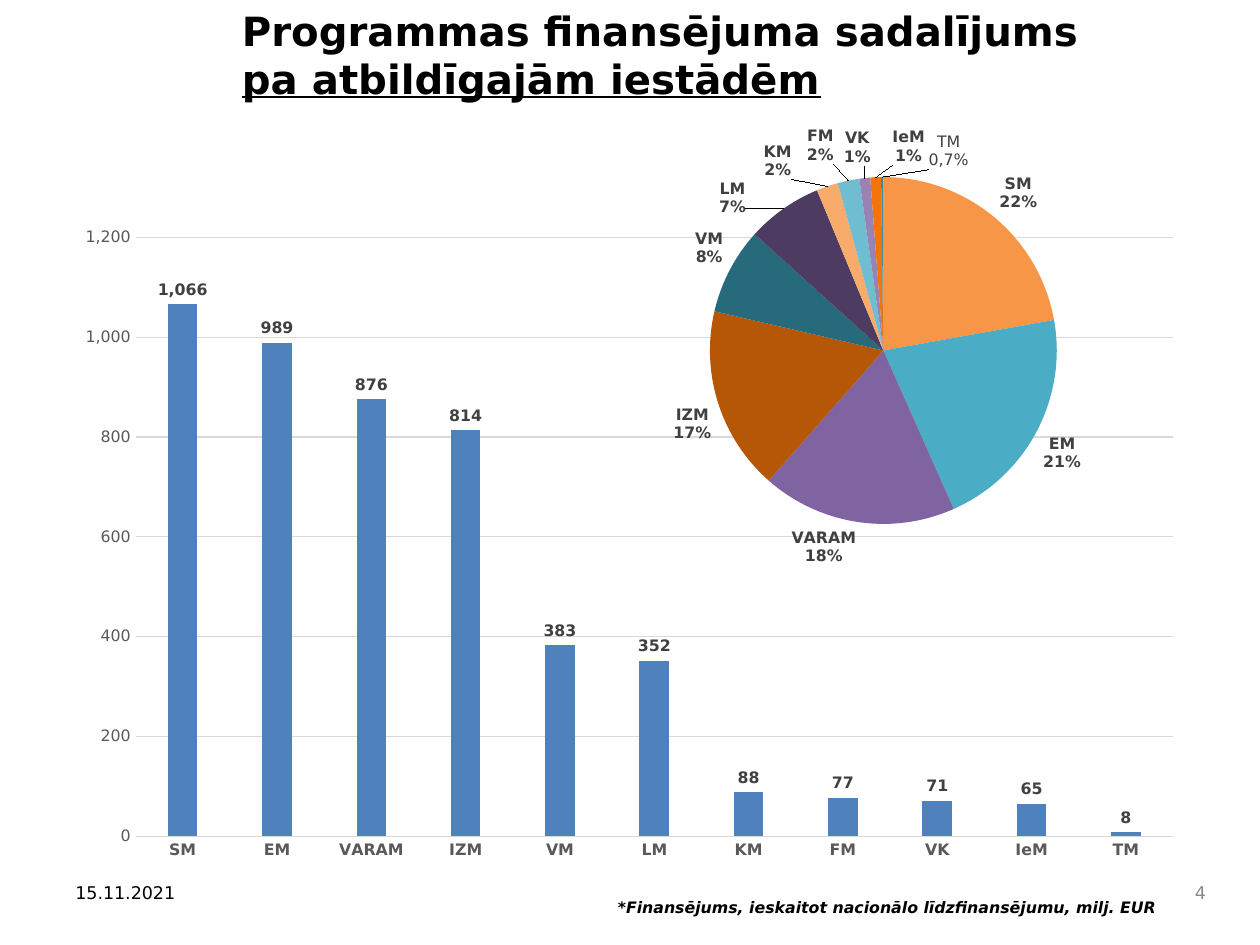
"""Build a slide of programme funding by institution, with a column chart and a pie."""
from typing import NamedTuple

from pptx import Presentation
from pptx.chart.data import CategoryChartData as Data
from pptx.dml.color import RGBColor as Rgb
from pptx.enum.chart import XL_CHART_TYPE as Kind, XL_LABEL_POSITION as Pos, XL_TICK_MARK as Tick
from pptx.enum.text import MSO_ANCHOR as Anchor, MSO_AUTO_SIZE as Fit, PP_ALIGN as Align
from pptx.oxml import parse_xml
from pptx.oxml.ns import nsdecls, qn
from pptx.util import Inches, Pt

WIDE, HIGH = Inches(10), Inches(7.5)
FONT = "DejaVu Sans"
BLACK = Rgb(0, 0, 0)
GREY = Rgb(0x89, 0x89, 0x89)
DARK = Rgb(0x40, 0x40, 0x40)
MID = Rgb(0x59, 0x59, 0x59)
PALE = Rgb(0xD9, 0xD9, 0xD9)
BLUE = Rgb(0x4F, 0x81, 0xBD)


class Box(NamedTuple):
    """A frame given as shares of its parent."""
    x: float
    y: float
    w: float
    h: float

    def rect(self) -> tuple:
        """Return the frame in slide units."""
        return (int(self.x * WIDE), int(self.y * HIGH),
                int(self.w * WIDE), int(self.h * HIGH))


class Note(NamedTuple):
    """A line of small text."""
    text: str
    box: Box
    size: int
    tint: Rgb
    align: Align
    anchor: Anchor = Anchor.TOP
    strong: bool = False


class Part(NamedTuple):
    """One institution: its sum, share, slice colour and label shift."""
    name: str
    total: int
    share: float
    tint: Rgb
    shift: tuple = ()


PARTS = [
    Part("SM", 1066, 22, Rgb(0xF7, 0x96, 0x46)),
    Part("EM", 989, 21, Rgb(0x4B, 0xAC, 0xC6)),
    Part("VARAM", 876, 18, Rgb(0x80, 0x64, 0xA2)),
    Part("IZM", 814, 17, Rgb(0xB6, 0x57, 0x08)),
    Part("VM", 383, 8, Rgb(0x27, 0x6A, 0x7C)),
    Part("LM", 352, 7, Rgb(0x4D, 0x3B, 0x62), (-0.05, 0.03)),
    Part("KM", 88, 2, Rgb(0xF9, 0xAB, 0x6B), (-0.05, 0)),
    Part("FM", 77, 2, Rgb(0x6F, 0xBD, 0xD1), (-0.02, -0.02)),
    Part("VK", 71, 1, Rgb(0x99, 0x83, 0xB5), (0.01, -0.01)),
    Part("IeM", 65, 1, Rgb(0xF3, 0x74, 0x0B), (0.05, -0.01)),
    Part("TM", 8, 0.2, Rgb(0x35, 0x8E, 0xA6), (0.1, 0)),
]
TITLE = "Programmas finansējuma sadalījums\npa atbildīgajām iestādēm"
NOTES = [
    Note("*Finansējums, ieskaitot nacionālo līdzfinansējumu, milj. EUR",
         Box(0.444, 0.943, 0.483, 0.044), 9, BLACK, Align.RIGHT, strong=True),
    Note("4", Box(0.92, 0.923, 0.047, 0.044), 10, GREY, Align.RIGHT, Anchor.MIDDLE),
    Note("15.11.2021", Box(0.05, 0.927, 0.233, 0.053), 10, BLACK, Align.LEFT),
]


def style(font, size: float, tint: Rgb, bold: bool = False) -> None:
    """Set face, size, colour and weight."""
    font.name, font.size, font.bold = FONT, Pt(size), bold
    font.color.rgb = tint


def head(slide, box: Box) -> None:
    """Fill and format the title."""
    shape = slide.shapes.title
    shape.left, shape.top, shape.width, shape.height = box.rect()
    frame = shape.text_frame
    frame.text = TITLE
    frame.auto_size, frame.vertical_anchor = Fit.NONE, Anchor.TOP
    for para in frame.paragraphs:
        para.alignment = Align.LEFT
        style(para.runs[0].font, 23, BLACK, True)
    frame.paragraphs[1].runs[0].font.underline = True


def write(slide, note: Note) -> None:
    """Draw one note."""
    frame = slide.shapes.add_textbox(*note.box.rect()).text_frame
    frame.word_wrap, frame.vertical_anchor = True, note.anchor
    frame.text = note.text
    para = frame.paragraphs[0]
    para.alignment = note.align
    font = para.runs[0].font
    style(font, note.size, note.tint, note.strong)
    font.italic = note.strong


def layout(box: tuple, inner: bool = False):
    """Return a manual layout element."""
    keys = [("layoutTarget", "inner"), ("xMode", "edge"), ("yMode", "edge")] if inner else []
    keys += zip("xywh", box)
    body = "".join(f'<c:{key} val="{val}"/>' for key, val in keys)
    return parse_xml(f'<c:layout {nsdecls("c")}><c:manualLayout>{body}'
                     "</c:manualLayout></c:layout>")


def graph(slide, kind: Kind, box: Box, inner: Box, vals: list):
    """Add a chart with a fixed plot area."""
    data = Data()
    data.categories = [part.name for part in PARTS]
    data.add_series("Series 1", vals)
    chart = slide.shapes.add_chart(kind, *box.rect(), data).chart
    chart.has_title = chart.has_legend = False
    style(chart.font, 10, BLACK)
    area = chart._chartSpace.chart.plotArea
    for old in area.findall(qn("c:layout")):
        area.remove(old)
    area.insert(0, layout(inner, True))
    return chart


def bars(slide, box: Box, inner: Box) -> None:
    """Draw the column chart."""
    chart = graph(slide, Kind.COLUMN_CLUSTERED, box, inner, [part.total for part in PARTS])
    plot = chart.plots[0]
    plot.gap_width, plot.overlap, plot.vary_by_categories = 219, -27, False
    row = plot.series[0]
    row.format.fill.solid()
    row.format.fill.fore_color.rgb = BLUE
    tags = row.data_labels
    tags.show_value, tags.position = True, Pos.OUTSIDE_END
    tags.number_format, tags.number_format_is_linked = "#,##0", False
    style(tags.font, 9, DARK, True)
    cat, val = chart.category_axis, chart.value_axis
    for axis in (cat, val):
        axis.major_tick_mark = axis.minor_tick_mark = Tick.NONE
        style(axis.tick_labels.font, 9, MID, axis is cat)
    val.minimum_scale, val.maximum_scale, val.major_unit = 0, 1200, 200
    val.tick_labels.number_format = "#,##0"
    val.tick_labels.number_format_is_linked = False
    val.format.line.fill.background()
    for line in (cat.format.line, val.major_gridlines.format.line):
        line.color.rgb, line.width = PALE, Pt(0.75)


def show(node) -> None:
    """Make a label show name and percent on two lines."""
    for key, flag in (("Val", 0), ("CatName", 1), ("Percent", 1)):
        node.find(qn(f"c:show{key}")).set("val", str(flag))
    mark = parse_xml(f'<c:separator {nsdecls("c")}>\n</c:separator>')
    node.find(qn("c:showBubbleSize")).addnext(mark)


def pie(slide, box: Box, inner: Box) -> None:
    """Draw the pie and shift its small labels."""
    chart = graph(slide, Kind.PIE, box, inner, [part.share for part in PARTS])
    row = chart.plots[0].series[0]
    tags = row.data_labels
    tags.number_format, tags.number_format_is_linked = "0%", False
    tags.position = Pos.OUTSIDE_END
    style(tags.font, 9, DARK, True)
    show(tags._element)
    for num, part in enumerate(PARTS):
        point = row.points[num]
        point.format.fill.solid()
        point.format.fill.fore_color.rgb = part.tint
        if not part.shift:
            continue
        tag = point.data_label
        if part.name == "TM":
            tag.text_frame.text = "TM\n0,7%"
            for para in tag.text_frame.paragraphs:
                style(para.runs[0].font, 9, DARK)
        else:
            style(tag.font, 9, DARK, True)
        tag.position = Pos.OUTSIDE_END
        node = tags._element.findall(qn("c:dLbl"))[-1]
        node.insert(1, layout(part.shift))
        show(node)


def main() -> None:
    """Build and save the slide."""
    deck = Presentation()
    deck.slide_width, deck.slide_height = WIDE, HIGH
    slide = deck.slides.add_slide(deck.slide_layouts[5])
    head(slide, Box(0.182, 0, 0.753, 0.15))
    for note in NOTES:
        write(slide, note)
    bars(slide, Box(0.05, 0.227, 0.9, 0.695), Box(0.064, 0.035, 0.915, 0.912))
    pie(slide, Box(0.435, 0.123, 0.528, 0.496), Box(0.243, 0.13, 0.522, 0.74))
    deck.save("out.pptx")


if __name__ == "__main__":
    main()
